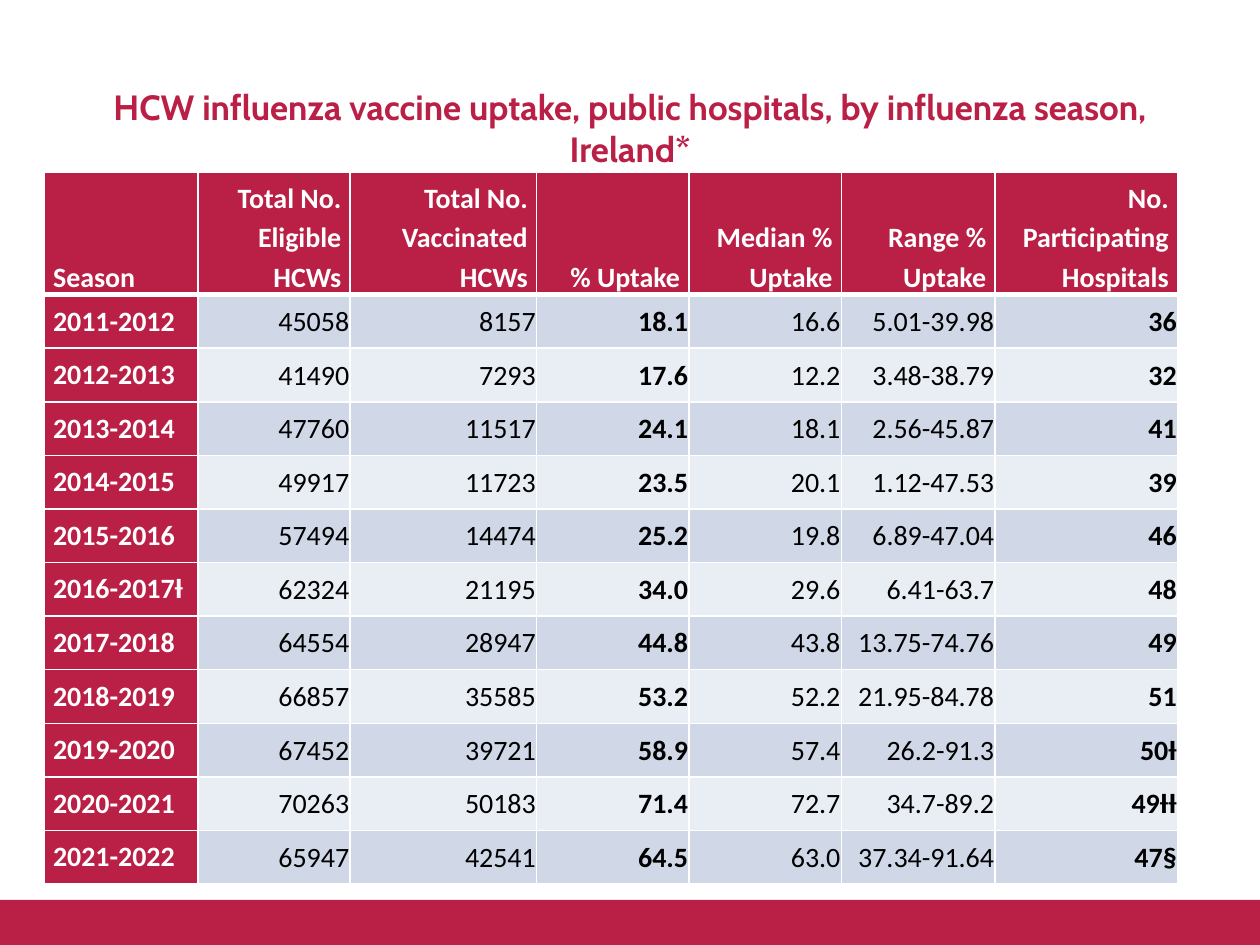
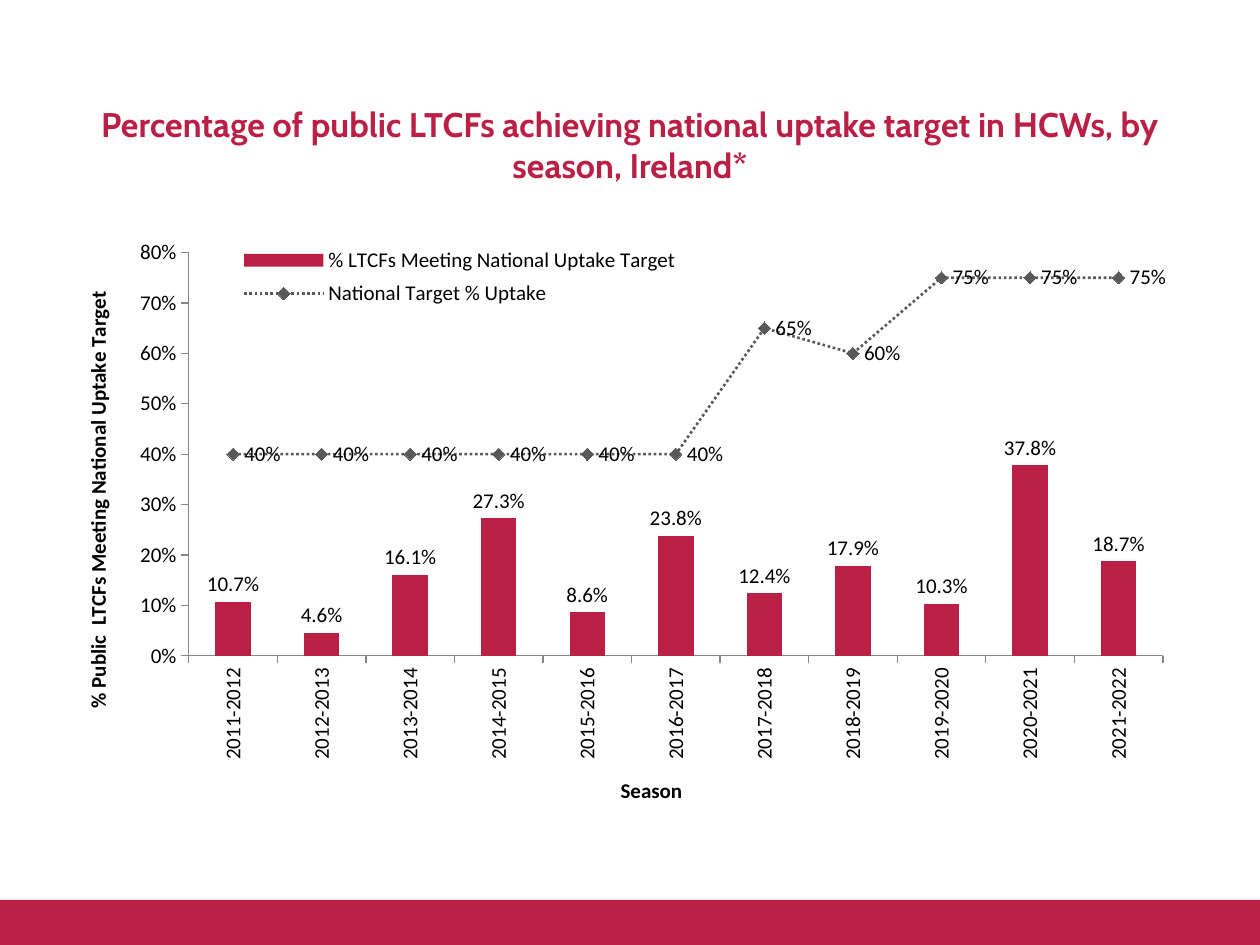
from pptx import Presentation
from pptx.chart.data import CategoryChartData
from pptx.dml.color import RGBColor
from pptx.enum.chart import (XL_CHART_TYPE, XL_LABEL_POSITION, XL_LEGEND_POSITION,
                             XL_MARKER_STYLE, XL_TICK_MARK)
from pptx.enum.dml import MSO_LINE
from pptx.enum.shapes import MSO_SHAPE
from pptx.enum.text import MSO_ANCHOR, PP_ALIGN
from pptx.oxml import parse_xml
from pptx.oxml.ns import nsdecls
from pptx.util import Cm, Pt

CRIMSON = RGBColor(0xBA, 0x1F, 0x46)
WHITE = RGBColor(0xFF, 0xFF, 0xFF)
BLACK = RGBColor(0, 0, 0)
BLUE_BAND = RGBColor(0xD0, 0xD8, 0xE8)
PALE_BAND = RGBColor(0xE9, 0xED, 0xF4)
TARGET_GREY = RGBColor(0x59, 0x59, 0x59)
AXIS_GREY = RGBColor(0x86, 0x86, 0x86)

CLUSTERED = XL_CHART_TYPE.COLUMN_CLUSTERED
LABEL_ABOVE_BAR = XL_LABEL_POSITION.OUTSIDE_END
LABEL_RIGHT = XL_LABEL_POSITION.RIGHT
LEGEND_TOP = XL_LEGEND_POSITION.TOP
DIAMOND = XL_MARKER_STYLE.DIAMOND
TICK_OUT = XL_TICK_MARK.OUTSIDE
DOTTED = MSO_LINE.ROUND_DOT
RECTANGLE = MSO_SHAPE.RECTANGLE
MIDDLE, BOTTOM = MSO_ANCHOR.MIDDLE, MSO_ANCHOR.BOTTOM
LEFT, CENTER, RIGHT = PP_ALIGN.LEFT, PP_ALIGN.CENTER, PP_ALIGN.RIGHT

TITLE_ONLY = 5
UPWARDS = "-5400000"

HEADINGS = ["Season", "Total No. Eligible HCWs", "Total No. Vaccinated HCWs", "% Uptake",
            "Median % Uptake", "Range % Uptake", "No. Participating Hospitals"]
COLUMN_WIDTHS = [3.1, 3.07, 3.76, 3.07, 3.07, 3.1, 3.68]
BOLD_COLUMNS = (0, 3, 6)
HOSPITAL_UPTAKE = [
    ["2011-2012", "45058", "8157", "18.1", "16.6", "5.01-39.98", "36"],
    ["2012-2013", "41490", "7293", "17.6", "12.2", "3.48-38.79", "32"],
    ["2013-2014", "47760", "11517", "24.1", "18.1", "2.56-45.87", "41"],
    ["2014-2015", "49917", "11723", "23.5", "20.1", "1.12-47.53", "39"],
    ["2015-2016", "57494", "14474", "25.2", "19.8", "6.89-47.04", "46"],
    ["2016-2017Ɨ", "62324", "21195", "34.0", "29.6", "6.41-63.7", "48"],
    ["2017-2018", "64554", "28947", "44.8", "43.8", "13.75-74.76", "49"],
    ["2018-2019", "66857", "35585", "53.2", "52.2", "21.95-84.78", "51"],
    ["2019-2020", "67452", "39721", "58.9", "57.4", "26.2-91.3", "50Ɨ"],
    ["2020-2021", "70263", "50183", "71.4", "72.7", "34.7-89.2", "49ƗƗ"],
    ["2021-2022", "65947", "42541", "64.5", "63.0", "37.34-91.64", "47§"],
]

SEASONS = [f"{year}-{year + 1}" for year in range(2011, 2022)]
LTCFS_MEETING_TARGET = [0.107, 0.046, 0.161, 0.273, 0.086, 0.238,
                        0.124, 0.179, 0.103, 0.378, 0.187]
NATIONAL_TARGET = [0.4] * 6 + [0.65, 0.6] + [0.75] * 3


def manual_layout(x, y, w, h, target=""):
    return parse_xml(
        f'<c:layout {nsdecls("c")}><c:manualLayout>{target}'
        '<c:xMode val="edge"/><c:yMode val="edge"/>'
        f'<c:x val="{x}"/><c:y val="{y}"/><c:w val="{w}"/><c:h val="{h}"/>'
        '</c:manualLayout></c:layout>')


class Deck:
    def __init__(self):
        self.presentation = Presentation()
        self.presentation.slide_width = Cm(25.4)
        self.presentation.slide_height = Cm(19.05)
        self.slide = None

    def add_slide(self, title, title_top, title_size):
        layout = self.presentation.slide_layouts[TITLE_ONLY]
        self.slide = self.presentation.slides.add_slide(layout)
        heading = self.slide.shapes.title
        heading.left, heading.top = Cm(1.3), Cm(title_top)
        heading.width, heading.height = Cm(22.81), Cm(2.77)
        heading.text_frame.text = title
        heading.text_frame.word_wrap = True
        heading.text_frame.vertical_anchor = MIDDLE
        paragraph = heading.text_frame.paragraphs[0]
        paragraph.alignment = CENTER
        self.style_font(paragraph.font, title_size, CRIMSON, True, "Cabin")
        self.add_band()

    def add_band(self):
        band = self.slide.shapes.add_shape(RECTANGLE, 0, Cm(18.14), Cm(25.4), Cm(0.91))
        band.shadow.inherit = False
        band.fill.solid()
        band.fill.fore_color.rgb = CRIMSON
        band.line.fill.background()

    def style_font(self, font, size, color, bold, name="Calibri"):
        font.name, font.size, font.bold = name, Pt(size), bold
        font.color.rgb = color

    def add_table(self, headings, records, left, top, widths, header_height, row_height):
        rows = [headings] + records
        heights = [header_height] + [row_height] * len(records)
        table = self.slide.shapes.add_table(
            len(rows), len(widths), Cm(left), Cm(top),
            Cm(sum(widths)), Cm(sum(heights))).table
        table.horz_banding = False
        for column, width in zip(table.columns, widths):
            column.width = Cm(width)
        for r, (row, height) in enumerate(zip(rows, heights)):
            table.rows[r].height = Cm(height)
            for c, text in enumerate(row):
                self.fill_cell(table.cell(r, c), text, r, c)

    def fill_cell(self, cell, text, r, c):
        in_header = r == 0
        is_label = in_header or c == 0
        for side in "LRTB":
            below_header = (in_header and side == "B") or (r == 1 and side == "T")
            self.add_border(cell, side, 3 if below_header else 1)
        cell.fill.solid()
        cell.fill.fore_color.rgb = CRIMSON if is_label else BLUE_BAND if r % 2 else PALE_BAND
        cell.margin_left = cell.margin_right = Cm(0.18 if is_label else 0.02)
        cell.margin_top = Cm(0 if is_label else 0.02)
        cell.margin_bottom = 0
        cell.vertical_anchor = BOTTOM if in_header else MIDDLE
        cell.text = text
        paragraph = cell.text_frame.paragraphs[0]
        paragraph.alignment = RIGHT if c else LEFT
        if in_header:
            paragraph.line_spacing = 1.15
        self.style_font(paragraph.font, 16, WHITE if is_label else BLACK,
                        in_header or c in BOLD_COLUMNS)

    def add_border(self, cell, side, points):
        properties = cell._tc.get_or_add_tcPr()
        properties.append(parse_xml(
            f'<a:ln{side} {nsdecls("a")} w="{Pt(points)}"><a:solidFill>'
            f'<a:srgbClr val="{WHITE}"/></a:solidFill></a:ln{side}>'))

    def add_target_chart(self, categories, achieved, target, left, top, width, height):
        data = CategoryChartData(number_format="0%")
        data.categories = categories
        data.add_series("% LTCFs Meeting National Uptake Target", achieved)
        data.add_series("National Target % Uptake", target)
        chart = self.slide.shapes.add_chart(
            CLUSTERED, Cm(left), Cm(top), Cm(width), Cm(height), data).chart
        chart.has_title = False
        self.style_font(chart.font, 12, BLACK, False)
        self.move_target_to_line(chart)
        bars, line = chart.plots
        bars.gap_width = 150
        bars.vary_by_categories = False
        achieved_bars, target_line = bars.series[0], line.series[0]
        achieved_bars.format.fill.solid()
        achieved_bars.format.fill.fore_color.rgb = CRIMSON
        self.style_target_line(target_line)
        self.add_labels(achieved_bars, "0.0%", LABEL_ABOVE_BAR)
        self.add_labels(target_line, "0%", LABEL_RIGHT)
        self.style_axes(chart)
        self.place_legend(chart)
        plot_area = chart.element.xpath("c:chart/c:plotArea")[0]
        for automatic in plot_area.xpath("c:layout"):
            plot_area.remove(automatic)
        plot_area.insert(0, manual_layout(0.111, 0.051, 0.859, 0.647,
                                          '<c:layoutTarget val="inner"/>'))

    def move_target_to_line(self, chart):
        bar_chart = chart.element.xpath("c:chart/c:plotArea/c:barChart")[0]
        target = bar_chart.xpath("c:ser")[1]
        for bar_only in target.xpath("c:invertIfNegative"):
            target.remove(bar_only)
        axis_ids = "".join(f'<c:axId val="{axis_id}"/>'
                           for axis_id in bar_chart.xpath("c:axId/@val"))
        line_chart = parse_xml(
            f'<c:lineChart {nsdecls("c")}><c:grouping val="standard"/>'
            f'<c:varyColors val="0"/><c:marker val="1"/>{axis_ids}</c:lineChart>')
        line_chart.insert(2, target)
        bar_chart.addnext(line_chart)

    def style_target_line(self, series):
        series.smooth = False
        series.format.line.color.rgb = TARGET_GREY
        series.format.line.width = Pt(1.5)
        series.format.line.dash_style = DOTTED
        series.marker.style = DIAMOND
        series.marker.size = 7
        series.marker.format.fill.solid()
        series.marker.format.fill.fore_color.rgb = TARGET_GREY
        series.marker.format.line.color.rgb = TARGET_GREY

    def add_labels(self, series, number_format, position):
        labels = series.data_labels
        labels.show_value = True
        labels.number_format = number_format
        labels.number_format_is_linked = False
        labels.position = position
        self.style_font(labels.font, 12, BLACK, False)

    def style_axes(self, chart):
        seasons, uptake = chart.category_axis, chart.value_axis
        uptake.minimum_scale, uptake.maximum_scale, uptake.major_unit = 0, 0.8, 0.1
        uptake.tick_labels.number_format = "0%"
        uptake.tick_labels.number_format_is_linked = False
        titles = ("Season", "% Public  LTCFs Meeting National Uptake Target")
        for axis, title in zip((seasons, uptake), titles):
            axis.has_major_gridlines = False
            axis.major_tick_mark = TICK_OUT
            axis.format.line.color.rgb = AXIS_GREY
            self.style_font(axis.tick_labels.font, 12, BLACK, False)
            axis.axis_title.text_frame.text = title
            self.style_font(axis.axis_title.text_frame.paragraphs[0].font, 12, BLACK, True)
        for body in chart.element.xpath(
                "//c:catAx/c:txPr/a:bodyPr | //c:valAx/c:title//a:bodyPr"):
            body.set("rot", UPWARDS)
            body.set("vert", "horz")

    def place_legend(self, chart):
        chart.has_legend = True
        chart.legend.position = LEGEND_TOP
        chart.legend.include_in_layout = True
        self.style_font(chart.legend.font, 12, BLACK, False)
        position = chart.element.xpath("c:chart/c:legend/c:legendPos")[0]
        position.addnext(manual_layout(0.15, 0.03, 0.4, 0.12))

    def save(self):
        self.presentation.save("out.pptx")


def main():
    deck = Deck()
    deck.add_slide("HCW influenza vaccine uptake, public hospitals, by influenza season, "
                   "Ireland*", 1.19, 20)
    deck.add_table(HEADINGS, HOSPITAL_UPTAKE, 0.89, 3.48, COLUMN_WIDTHS, 2.46, 1.08)
    deck.add_slide("Percentage of public LTCFs achieving national uptake target in HCWs, "
                   "by season, Ireland*", 1.52, 19.5)
    deck.add_target_chart(SEASONS, LTCFS_MEETING_TARGET, NATIONAL_TARGET,
                          1.27, 4.45, 22.86, 12.57)
    deck.save()


if __name__ == "__main__":
    main()
